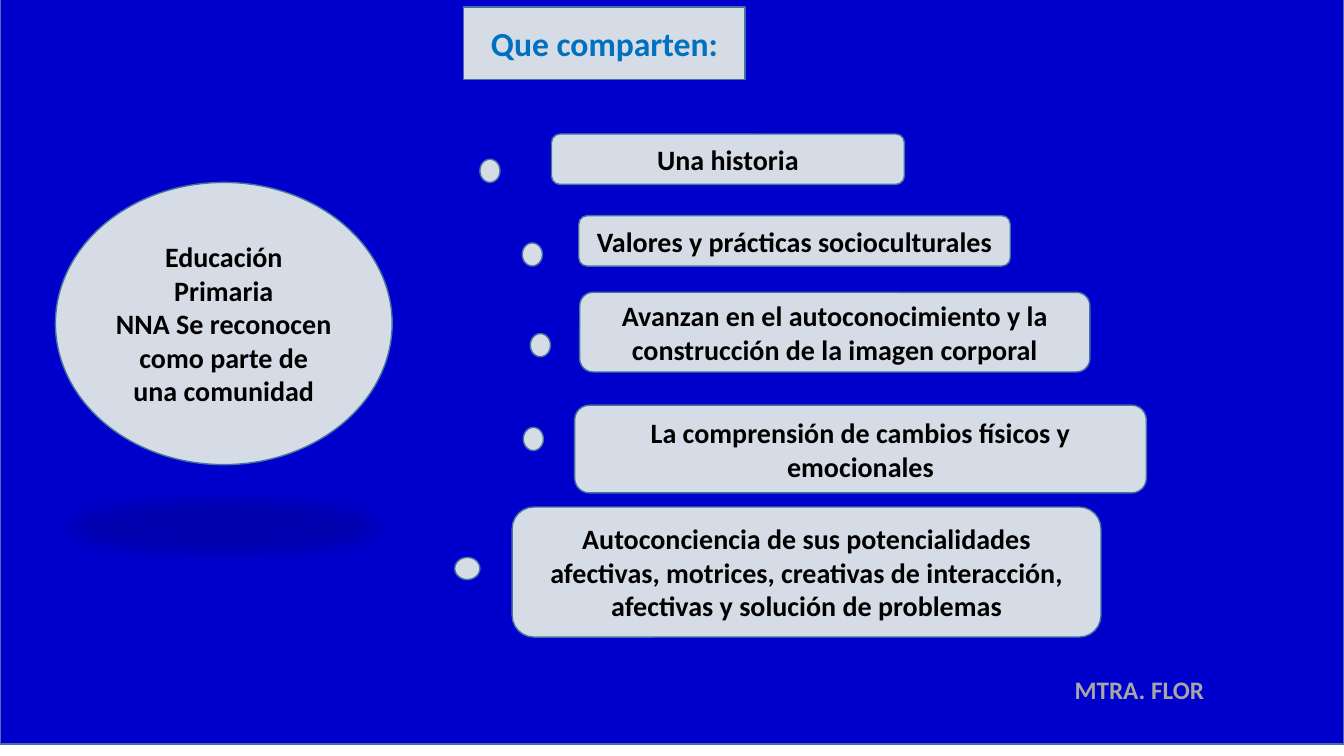
from dataclasses import dataclass

from lxml import etree
from pptx import Presentation
from pptx.dml.color import RGBColor
from pptx.enum.shapes import MSO_SHAPE
from pptx.enum.text import MSO_ANCHOR, MSO_AUTO_SIZE, PP_ALIGN
from pptx.oxml import parse_xml
from pptx.oxml.ns import nsdecls, qn
from pptx.util import Inches, Pt

RECTANGLE = MSO_SHAPE.RECTANGLE
CIRCLE = MSO_SHAPE.FLOWCHART_CONNECTOR
ROUNDED = MSO_SHAPE.ROUNDED_RECTANGLE
MIDDLE = MSO_ANCHOR.MIDDLE
CENTER, LEFT = PP_ALIGN.CENTER, PP_ALIGN.LEFT

# Content: boxes are (left, top, width, height) in inches
SLIDE_SIZE = (13.33, 7.5)
BACKDROP_BOX = (0, -0.12, *SLIDE_SIZE)
TITLE = ("Que comparten:", (4.6, 0.07, 2.79, 0.72))
COMMUNITY = (
    ["Educación Primaria", "NNA Se reconocen como parte de una comunidad"],
    (0.55, 1.81, 3.34, 2.8),
)
DOT = (0.2, 0.23)
WIDE_DOT = (0.25, 0.22)
# Each shared trait: text, its box, dot position, dot size
TRAITS = [
    ("Una historia", (5.47, 1.33, 3.5, 0.5), (4.76, 1.58), DOT),
    ("Valores y prácticas socioculturales", (5.74, 2.14, 4.28, 0.5), (5.18, 2.41), DOT),
    ("Avanzan en el autoconocimiento y la construcción de la imagen corporal",
     (5.75, 2.9, 5.06, 0.79), (5.26, 3.31), DOT),
    ("La comprensión de cambios físicos y emocionales",
     (5.7, 4.02, 5.67, 0.87), (5.19, 4.24), DOT),
    ("Autoconciencia de sus potencialidades afectivas, motrices, creativas de "
     "interacción, afectivas y solución de problemas",
     (5.08, 5.03, 5.84, 1.29), (4.51, 5.53), WIDE_DOT),
]
SIGNATURE = ("MTRA. FLOR", (10.56, 6.64, 1.8, 0.4))


@dataclass(frozen=True)
class Theme:
    font: str = "Calibri"
    backdrop: str = "0000CC"
    panel: str = "D6DCE5"
    outline: str = "43739E"
    title: str = "0070C0"
    body: str = "000000"
    signature: str = "A6A6A6"
    title_size: int = 24
    body_size: int = 20
    signature_size: int = 18
    line_width: int = 1


THEME = Theme()


def paint(shape, fill):
    shape.fill.solid()
    shape.fill.fore_color.rgb = RGBColor.from_string(fill)
    shape.line.color.rgb = RGBColor.from_string(THEME.outline)
    shape.line.width = Pt(THEME.line_width)


def add_panel(slide, kind, box, fill=THEME.panel):
    shape = slide.shapes.add_shape(kind, *map(Inches, box))
    shape.shadow.inherit = False
    paint(shape, fill)
    return shape


def write(shape, lines, size=THEME.body_size, color=THEME.body, align=CENTER):
    frame = shape.text_frame
    frame.word_wrap = True
    frame.vertical_anchor = MIDDLE
    for index, line in enumerate(lines):
        paragraph = frame.add_paragraph() if index else frame.paragraphs[0]
        paragraph.alignment = align
        run = paragraph.add_run()
        run.text = line
        run.font.name = THEME.font
        run.font.size = Pt(size)
        run.font.bold = True
        run.font.color.rgb = RGBColor.from_string(color)


def add_floor_shadow(shape):
    effects = shape.element.spPr.find(qn("a:effectLst"))
    effects.append(parse_xml(
        f'<a:outerShdw {nsdecls("a")} blurRad="{Pt(12)}" dist="{Pt(25)}" '
        'dir="5400000" sx="90000" sy="-19000" rotWithShape="0">'
        '<a:srgbClr val="000000"><a:alpha val="15000"/></a:srgbClr></a:outerShdw>'))


def place_title(slide):
    text, box = TITLE
    title = slide.shapes.title
    title.left, title.top, title.width, title.height = map(Inches, box)
    geometry = etree.SubElement(title.element.spPr, qn("a:prstGeom"), prst="snip1Rect")
    etree.SubElement(geometry, qn("a:avLst"))
    paint(title, THEME.panel)
    write(title, [text], THEME.title_size, THEME.title)
    title.text_frame.auto_size = MSO_AUTO_SIZE.NONE


def main():
    presentation = Presentation()
    presentation.slide_width, presentation.slide_height = map(Inches, SLIDE_SIZE)
    slide = presentation.slides.add_slide(presentation.slide_layouts[5])

    # Blue backdrop, sent behind the title
    backdrop = add_panel(slide, RECTANGLE, BACKDROP_BOX, THEME.backdrop)
    slide.shapes.title.element.addprevious(backdrop.element)
    place_title(slide)

    # Community circle
    lines, box = COMMUNITY
    community = add_panel(slide, CIRCLE, box)
    add_floor_shadow(community)
    write(community, lines)

    # Shared traits with their dots
    for text, box, position, size in TRAITS:
        add_panel(slide, CIRCLE, position + size)
        write(add_panel(slide, ROUNDED, box), [text])

    # Signature
    text, box = SIGNATURE
    signature = slide.shapes.add_textbox(*map(Inches, box))
    write(signature, [text], THEME.signature_size, THEME.signature, LEFT)

    presentation.save("out.pptx")


if __name__ == "__main__":
    main()
